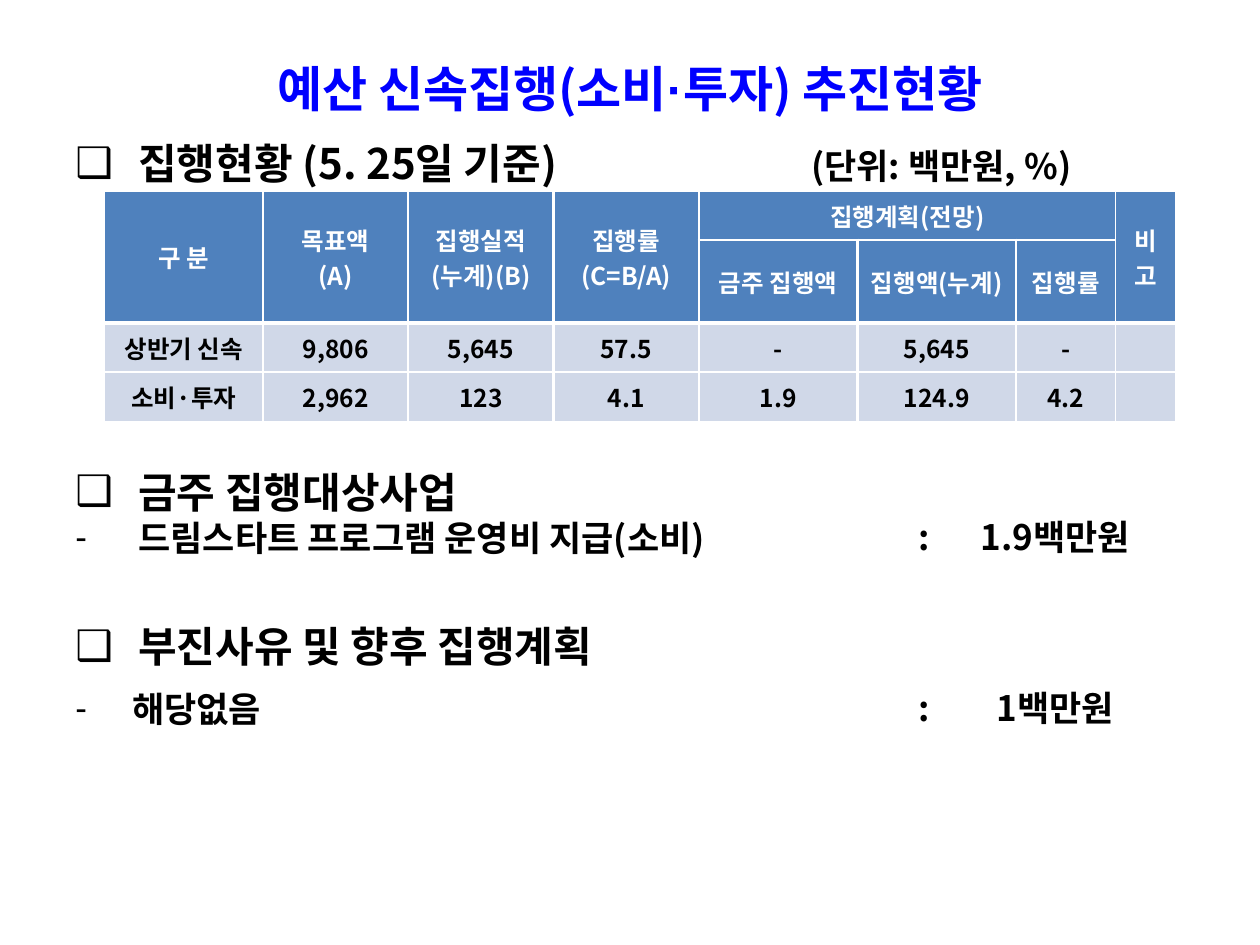
from lxml.etree import SubElement
from pptx import Presentation
from pptx.dml.color import RGBColor
from pptx.enum.text import MSO_ANCHOR as Anchor, PP_ALIGN as Align
from pptx.oxml.ns import qn
from pptx.util import Pt

FONT = "Noto Sans CJK KR"
DOT_FONT = "Arial"
BLACK = RGBColor(0, 0, 0)
WHITE = RGBColor(255, 255, 255)
BLUE = RGBColor(0, 0, 255)
HEAD_FILL = RGBColor(0x4F, 0x81, 0xBD)
BODY_FILL = RGBColor(0xD0, 0xD8, 0xE8)

TITLE = [("예산 신속집행(소비", FONT), ("·", DOT_FONT), ("투자) 추진현황", FONT)]
OUTLINE = [
    ("❑", "집행현황 (5. 25일 기준)", 24, 1.4, 0, 72, 36),
    ("❑", "금주 집행대상사업", 24, 1.4, 147.4, 72, 36),
    ("-", "드림스타트 프로그램 운영비 지급(소비)", 20, 1.0, 0, 72, 36),
    ("❑", "부진사유 및 향후 집행계획", 24, 1.4, 24, 72, 36),
    ("-", "해당없음", 20, 1.4, 0, 68.4, 32.4),
]

COLS = [90.6, 83, 83, 83, 90.6, 90.6, 57, 34.5]
ROWS = [27.5, 47.5, 28.25, 28.25]
CELLS = [
    ["구 분", "목표액\n(A)", "집행실적(누계)(B)", "집행률\n(C=B/A)",
     "집행계획(전망)", "", "", "비 고"],
    ["", "", "", "", "금주 집행액", "집행액(누계)", "집행률", ""],
    ["상반기 신속", "9,806", "5,645", "57.5", "-", "5,645", "-", ""],
    ["소비·투자", "2,962", "123", "4.1", "1.9", "124.9", "4.2", ""],
]
ROW_LINES = [1, 1.5, 2.25, 1.5, 1]
COL_LINES = [1] + [1.5] * 6 + [1, 1]


def set_font(p, size, color):
    p.font.size = Pt(size)
    p.font.bold = True
    p.font.color.rgb = color
    p.font.name = FONT
    props = p._p.get_or_add_pPr().find(qn("a:defRPr"))
    SubElement(props, qn("a:ea"), typeface=FONT)


def set_bullet(p, char, left, hanging):
    props = p._p.get_or_add_pPr()
    props.set("marL", str(Pt(left)))
    props.set("indent", str(-Pt(hanging)))
    color = SubElement(props, qn("a:buClr"))
    SubElement(color, qn("a:srgbClr"), val=str(BLACK))
    SubElement(props, qn("a:buFont"), typeface="Arial")
    SubElement(props, qn("a:buChar"), char=char)


def add_outline(s, x, y, w, h):
    tf = s.shapes.add_textbox(Pt(x), Pt(y), Pt(w), Pt(h)).text_frame
    tf.word_wrap = True
    tf.margin_top = Pt(14)
    p = tf.paragraphs[0]
    p.alignment = Align.CENTER
    set_font(p, 28, BLUE)
    for text, font in TITLE:
        r = p.add_run()
        r.text = text
        r.font.name = font
        SubElement(r._r.get_or_add_rPr(), qn("a:ea"), typeface=font)
    for char, text, size, spacing, before, left, hanging in OUTLINE:
        p = tf.add_paragraph()
        p.text = text
        p.line_spacing = spacing
        p.space_before = Pt(before)
        set_bullet(p, char, left, hanging)
        set_font(p, size, BLACK)


def add_label(s, text, x, y, w, align=Align.LEFT):
    tf = s.shapes.add_textbox(Pt(x), Pt(y), Pt(w), Pt(29)).text_frame
    tf.word_wrap = True
    tf.margin_left = tf.margin_right = tf.margin_top = tf.margin_bottom = 0
    p = tf.paragraphs[0]
    p.text = text
    p.alignment = align
    set_font(p, 20, BLACK)


def add_amount(s, text, x, y, w):
    add_label(s, ":", x, y, 12)
    add_label(s, text, x + 20, y, w - 20, Align.CENTER)


def set_borders(cell, widths):
    props = cell._tc.get_or_add_tcPr()
    for side, width in zip("LRTB", widths):
        ln = SubElement(props, qn(f"a:ln{side}"), w=str(Pt(width)))
        fill = SubElement(ln, qn("a:solidFill"))
        SubElement(fill, qn("a:srgbClr"), val=str(WHITE))


def add_budget_table(s, x, y):
    table = s.shapes.add_table(len(ROWS), len(COLS), Pt(x), Pt(y),
                               Pt(sum(COLS)), Pt(sum(ROWS))).table
    table.first_row = table.horz_banding = False
    for col, width in zip(table.columns, COLS):
        col.width = Pt(width)
    for row, height in zip(table.rows, ROWS):
        row.height = Pt(height)
    for c in (0, 1, 2, 3, 7):
        table.cell(0, c).merge(table.cell(1, c))
    table.cell(0, 4).merge(table.cell(0, 6))
    for r, texts in enumerate(CELLS):
        for c, text in enumerate(texts):
            cell = table.cell(r, c)
            if cell.is_spanned:
                continue
            bottom = r + (cell.span_height if cell.is_merge_origin else 1)
            right = c + (cell.span_width if cell.is_merge_origin else 1)
            set_borders(cell, (COL_LINES[c], COL_LINES[right],
                               ROW_LINES[r], ROW_LINES[bottom]))
            cell.fill.solid()
            cell.fill.fore_color.rgb = HEAD_FILL if r < 2 else BODY_FILL
            cell.vertical_anchor = Anchor.MIDDLE
            cell.text = text
            for p in cell.text_frame.paragraphs:
                p.alignment = Align.CENTER
                set_font(p, 14, WHITE if r < 2 else BLACK)


def main():
    prs = Presentation()
    prs.slide_width, prs.slide_height = Pt(720), Pt(540)
    s = prs.slides.add_slide(prs.slide_layouts[6])
    add_outline(s, 0, 19.5, 720, 511)
    add_label(s, "(단위: 백만원, %)", 463.5, 82.5, 200)
    add_amount(s, "1.9백만원", 525, 294.75, 136)
    add_amount(s, "1백만원", 525, 392.25, 136)
    add_budget_table(s, 59.75, 109.5)
    prs.save("out.pptx")


if __name__ == "__main__":
    main()
